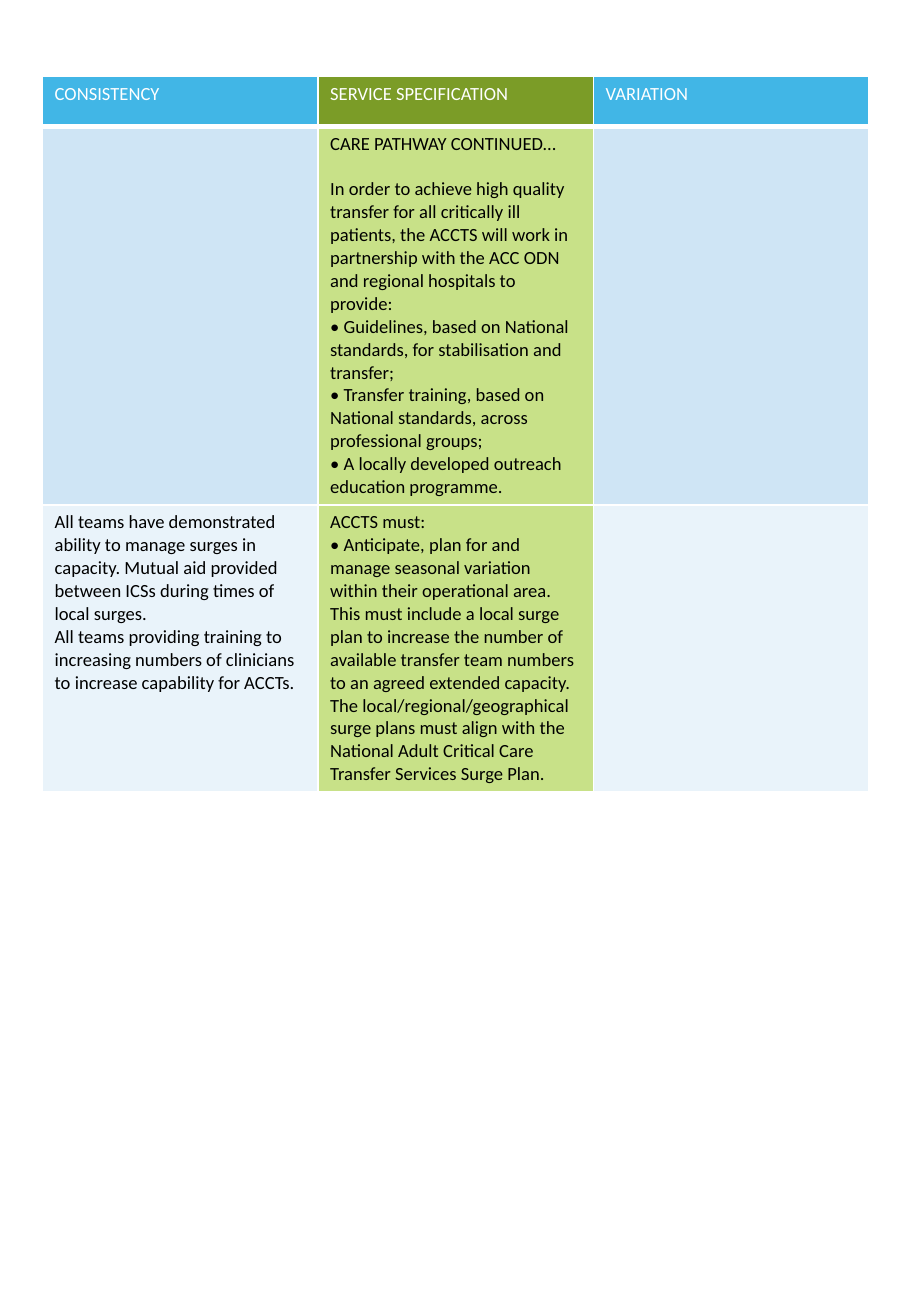
import dataclasses

import pptx
import pptx.dml.color
import pptx.oxml
import pptx.oxml.ns
import pptx.table
import pptx.util

Cm = pptx.util.Cm
Pt = pptx.util.Pt
RGBColor = pptx.dml.color.RGBColor

WHITE = RGBColor(0xFF, 0xFF, 0xFF)
BLACK = RGBColor(0x00, 0x00, 0x00)
BLUE = RGBColor(0x41, 0xB6, 0xE6)
SKY = RGBColor(0xCF, 0xE5, 0xF5)
ICE = RGBColor(0xE9, 0xF3, 0xFA)
OLIVE = RGBColor(0x7B, 0x9C, 0x27)
LIME = RGBColor(0xC8, 0xE1, 0x88)

FONT = "Calibri"
SIZE = Pt(11)
LINE = Pt(13.4)
THIN = Pt(1)
THICK = Pt(3)
LEFT, TOP, WIDTH = Cm(0.89), Cm(1.6), Cm(5.76)


@dataclasses.dataclass(frozen=True)
class Para:
    text: str
    above: pptx.util.Length = Pt(0)


@dataclasses.dataclass(frozen=True)
class Row:
    height: pptx.util.Length
    side: RGBColor
    middle: RGBColor
    ink: RGBColor
    top: pptx.util.Length
    bottom: pptx.util.Length
    cells: tuple[tuple[Para, ...], ...]


ROWS = (
    Row(Cm(1.04), BLUE, OLIVE, WHITE, THIN, THICK, (
        (Para("CONSISTENCY"),),
        (Para("SERVICE SPECIFICATION"),),
        (Para("VARIATION"),),
    )),
    Row(Cm(7.9), SKY, LIME, BLACK, THICK, THIN, (
        (),
        (
            Para("CARE PATHWAY CONTINUED…"),
            Para("In order to achieve high quality transfer for all critically ill "
                 "patients, the ACCTS will work in partnership with the ACC ODN and "
                 "regional hospitals to provide:", LINE),
            Para("• Guidelines, based on National standards, for stabilisation and transfer;"),
            Para("• Transfer training, based on National standards, across professional groups;"),
            Para("• A locally developed outreach education programme."),
        ),
        (),
    )),
    Row(Cm(6), ICE, LIME, BLACK, THIN, THIN, (
        (
            Para("All teams have demonstrated ability to manage surges in capacity. "
                 "Mutual aid provided between ICSs during times of local surges."),
            Para("All teams providing training to increasing numbers of clinicians "
                 "to increase capability for ACCTs."),
        ),
        (
            Para("ACCTS must:"),
            Para("• Anticipate, plan for and manage seasonal variation within their "
                 "operational area. This must include a local surge plan to increase the "
                 "number of available transfer team numbers to an agreed extended capacity. "
                 "The local/regional/geographical surge plans must align with the National "
                 "Adult Critical Care Transfer Services Surge Plan."),
        ),
        (),
    )),
)


def add_edge(cell: pptx.table._Cell, side: str, width: pptx.util.Length) -> None:
    edge = pptx.oxml.parse_xml(
        f'<a:ln{side} {pptx.oxml.ns.nsdecls("a")} w="{int(width)}"><a:solidFill>'
        f'<a:srgbClr val="{WHITE}"/></a:solidFill></a:ln{side}>'
    )
    cell._tc.get_or_add_tcPr().append(edge)


def add_text(cell: pptx.table._Cell, paras: tuple[Para, ...], ink: RGBColor) -> None:
    frame = cell.text_frame
    for index, para in enumerate(paras):
        block = frame.add_paragraph() if index else frame.paragraphs[0]
        block.space_before = para.above
        run = block.add_run()
        run.text = para.text
        run.font.name = FONT
        run.font.size = SIZE
        run.font.bold = False
        run.font.color.rgb = ink


def draw_row(table: pptx.table.Table, index: int, row: Row) -> None:
    table.rows[index].height = row.height
    for col, paras in enumerate(row.cells):
        cell = table.cell(index, col)
        for side, width in (("L", THIN), ("R", THIN), ("T", row.top), ("B", row.bottom)):
            add_edge(cell, side, width)
        cell.fill.solid()
        cell.fill.fore_color.rgb = row.middle if col == 1 else row.side
        add_text(cell, paras, row.ink)


def main() -> None:
    deck = pptx.Presentation()
    deck.slide_width, deck.slide_height = Cm(19.05), Cm(27.51)
    slide = deck.slides.add_slide(deck.slide_layouts[6])
    count = len(ROWS[0].cells)
    height = sum(row.height for row in ROWS)
    table = slide.shapes.add_table(len(ROWS), count, LEFT, TOP, WIDTH * count, height).table
    table.horz_banding = False
    for col in table.columns:
        col.width = WIDTH
    for index, row in enumerate(ROWS):
        draw_row(table, index, row)
    deck.save("out.pptx")


if __name__ == "__main__":
    main()
